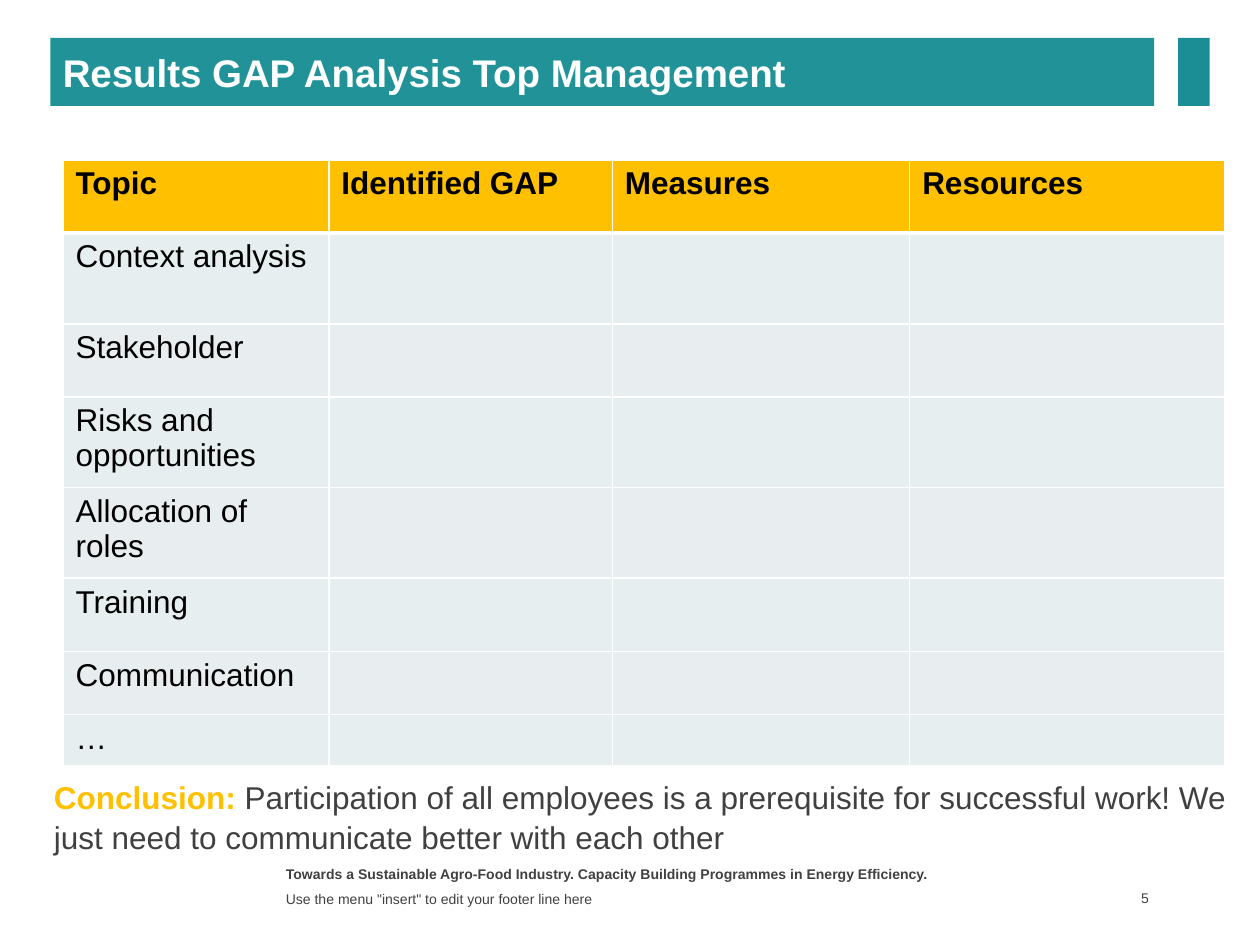
from lxml import etree
from pptx import Presentation
from pptx import util as u
from pptx.dml.color import RGBColor
from pptx.enum import shapes, text
from pptx.oxml import ns

WHITE = RGBColor(0xFF, 0xFF, 0xFF)
BLACK = RGBColor(0x00, 0x00, 0x00)
GREY = RGBColor(0x40, 0x40, 0x40)
AMBER = RGBColor(0xFF, 0xC0, 0x00)
TEAL = RGBColor(0x20, 0x92, 0x98)
DARK_TEAL = RGBColor(0x1B, 0x8E, 0x95)
ROW_FILLS = [RGBColor(0xE8, 0xEE, 0xEF), RGBColor(0xE7, 0xEE, 0xEF)]


def add_span(para, words, size, color, bold=False):
    span = para.add_run()
    span.text = words
    span.font.name = "Arial"
    span.font.size = u.Pt(size)
    span.font.bold = bold
    span.font.color.rgb = color


def add_border(cell, side, points):
    """Draw a white line on one side (L, R, T or B) of a table cell."""
    line = etree.SubElement(cell._tc.get_or_add_tcPr(), ns.qn(f"a:ln{side}"), w=str(u.Pt(points)))
    fill = etree.SubElement(line, ns.qn("a:solidFill"))
    etree.SubElement(fill, ns.qn("a:srgbClr"), val=str(WHITE))


deck = Presentation()
deck.slide_width, deck.slide_height = u.Inches(10), u.Inches(7.5)
page = deck.slides.add_slide(deck.slide_layouts[6])

# Title bar and accent block
bars = []
for left, width, color in [(0.4, 8.76, TEAL), (9.35, 0.25, DARK_TEAL)]:
    bar = page.shapes.add_shape(shapes.MSO_SHAPE.RECTANGLE, u.Inches(left), u.Inches(0.3),
                                u.Inches(width), u.Inches(0.54))
    bar.shadow.inherit = False
    bar.fill.solid()
    bar.fill.fore_color.rgb = color
    bar.line.fill.background()
    bars.append(bar)
title = bars[0].text_frame
title.vertical_anchor = text.MSO_ANCHOR.MIDDLE
title.paragraphs[0].alignment = text.PP_ALIGN.LEFT
add_span(title.paragraphs[0], "Results GAP Analysis Top Management", 22, WHITE, True)

# Gap table
headings = ["Topic", "Identified GAP", "Measures", "Resources"]
topics = ["Context analysis", "Stakeholder", "Risks and opportunities", "Allocation of roles",
          "Training", "Communication", "…"]
column_widths = [2.11, 2.25, 2.36, 2.5]
row_heights = [0.58, 0.72, 0.58, 0.72, 0.72, 0.58, 0.5, 0.41]
table = page.shapes.add_table(len(row_heights), len(column_widths), u.Inches(0.5), u.Inches(1.27),
                              u.Inches(sum(column_widths)), u.Inches(sum(row_heights))).table
for column, width in zip(table.columns, column_widths):
    column.width = u.Inches(width)
for row, height in zip(table.rows, row_heights):
    row.height = u.Inches(height)

rows = [headings] + [[topic, "", "", ""] for topic in topics]
for row_index, labels in enumerate(rows):
    is_header = row_index == 0
    for column_index, label in enumerate(labels):
        cell = table.cell(row_index, column_index)
        for side in "LRTB":
            beside_header = (side == "B" and is_header) or (side == "T" and row_index == 1)
            add_border(cell, side, 3 if beside_header else 1)
        cell.fill.solid()
        cell.fill.fore_color.rgb = AMBER if is_header else ROW_FILLS[row_index % 2]
        if label:
            add_span(cell.text_frame.paragraphs[0], label, 18, BLACK, is_header)

# Conclusion and footer
top, middle = text.MSO_ANCHOR.TOP, text.MSO_ANCHOR.MIDDLE
left_align, right_align = text.PP_ALIGN.LEFT, text.PP_ALIGN.RIGHT
conclusion = [
    ("Conclusion: ", 18, AMBER, True),
    ("Participation of all employees is a prerequisite for successful work! "
     "We just need to communicate better with each other", 18, GREY, False),
]
programme = [("Towards a Sustainable Agro-Food Industry. "
              "Capacity Building Programmes in Energy Efficiency.", 8, GREY, True)]
footer = [('Use the menu "insert" to edit your footer line here', 8, GREY, False)]
page_number = [("5", 8, GREY, False)]
for place, anchor, alignment, right_inset, spacing, spans in [
    ((0.33, 6.11, 9.58, 0.71), top, left_align, 0.1, 1.05, conclusion),
    ((2.17, 6.82, 5.5, 0.21), top, left_align, 0.1, 1.0, programme),
    ((2.17, 7.04, 5.5, 0.19), middle, left_align, 0.1, 1.0, footer),
    ((8.6, 7.03, 0.56, 0.2), middle, right_align, 0.04, 1.0, page_number),
]:
    box = page.shapes.add_textbox(*[u.Inches(length) for length in place])
    frame = box.text_frame
    frame.word_wrap = True
    frame.vertical_anchor = anchor
    frame.margin_right = u.Inches(right_inset)
    para = frame.paragraphs[0]
    para.alignment = alignment
    para.line_spacing = spacing
    for span in spans:
        add_span(para, *span)

deck.save("out.pptx")
